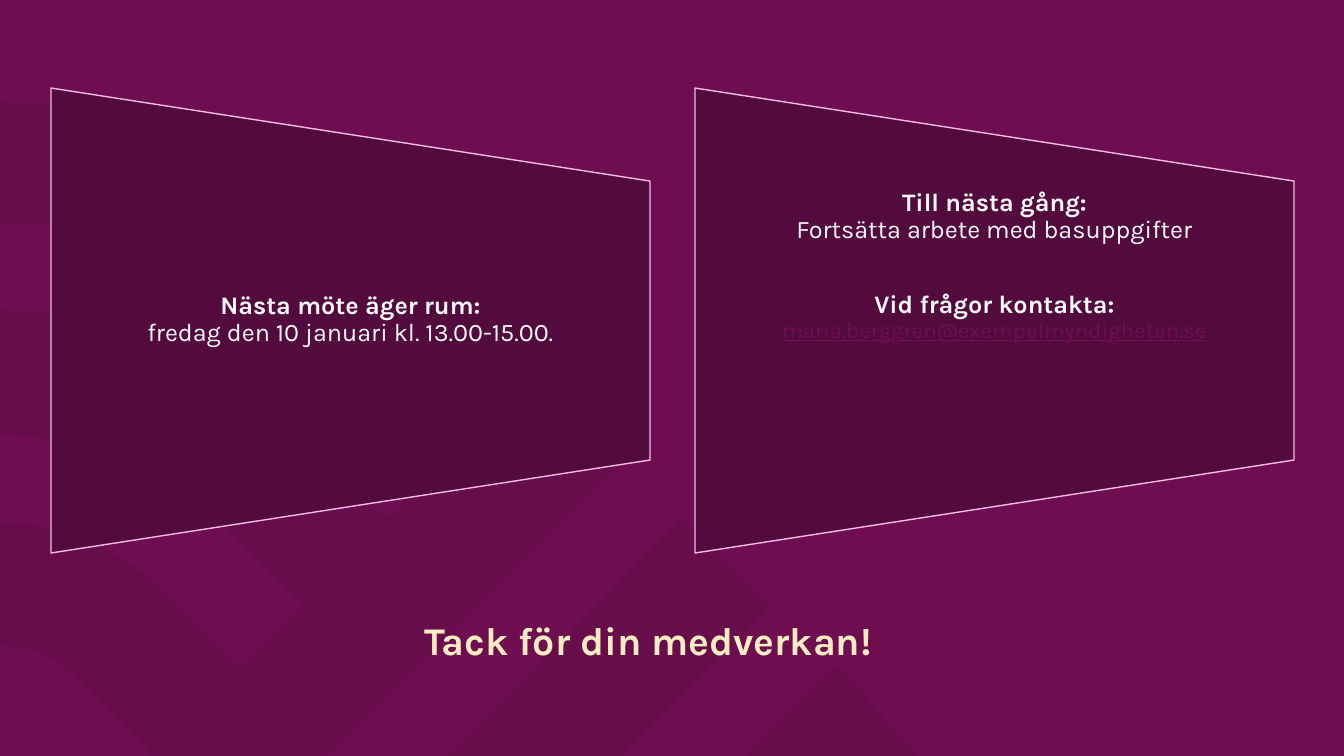
"""Build a closing slide with the next meeting, contact details and thanks."""
from lxml.etree import SubElement
from pptx import Presentation
from pptx.dml.color import RGBColor
from pptx.enum.shapes import MSO_SHAPE
from pptx.enum.text import MSO_ANCHOR, PP_ALIGN
from pptx.oxml.ns import qn
from pptx.util import Pt

PANELS = [
    {"anchor": MSO_ANCHOR.MIDDLE, "inset": 0, "blocks": [
        ("Nästa möte äger rum:", "fredag den 10 januari kl. 13.00-15.00.", "body"),
    ]},
    {"anchor": MSO_ANCHOR.TOP, "inset": 10, "blocks": [
        ("Till nästa gång:", "Fortsätta arbete med basuppgifter", "body"),
        ("Vid frågor kontakta:", "maria.berggren@exempelmyndigheten.se", "mail"),
    ]},
]
THANKS = "Tack för din medverkan!"

# Each contour lists points; a six-number entry is a Bézier segment.
CONTOURS = [
    [(838, 665), (917, 756), (745, 756)],
    [(682, 518), (771, 606), (621, 756), (447, 756)],
    [(0, 102), (58, 105), (205, 119, 347, 181, 458, 293), (624, 459),
     (327, 756), (149, 756), (152, 753), (75, 676),
     (59, 660, 40, 650, 20, 647), (0, 645), (0, 522), (2, 522),
     (60, 523, 119, 546, 163, 592), (241, 668), (303, 606), (226, 529),
     (223, 525), (176, 480, 119, 452, 59, 440), (0, 434), (0, 310),
     (40, 312), (139, 323, 235, 365, 310, 440), (388, 518), (451, 455),
     (373, 378), (286, 289, 172, 236, 53, 224), (0, 223)],
]

THEME = {
    "font": "Karla", "bg": "6E0E50", "pattern": "370728", "pattern_alpha": 10,
    "panel": "520B3C", "edge": "F6BBE4",
    "head": {"size": 18, "color": "FAFAFA", "bold": True},
    "body": {"size": 18, "color": "FAFAFA", "bold": False},
    "mail": {"size": 16, "color": "6E0E50", "bold": False, "underline": True},
    "thanks": {"size": 28, "color": "FFECC1", "bold": True},
}
SCALE = 914400 / 100.8
SLIDE_W, SLIDE_H = 1344, 756
PANEL_X, PANEL_Y, PANEL_W, PANEL_H, PANEL_STEP = 51, 88, 599, 465, 644
TEXT_Y, TEXT_H, TEXT_INSET = 180, 280, 12
THANKS_BOX = (415, 611, 514, 57)
CURVE_STEPS = 12


def px(n):
    return round(n * SCALE)


def rgb(code):
    return RGBColor.from_string(code)


def set_all(obj, values):
    for name, value in values.items():
        setattr(obj, name, value)


def flatten(contour):
    points = []
    for seg in contour:
        if len(seg) == 2:
            points.append(seg)
            continue
        curve = [points[-1], seg[:2], seg[2:4], seg[4:]]
        for i in range(1, CURVE_STEPS + 1):
            t = i / CURVE_STEPS
            weights = ((1 - t) ** 3, 3 * t * (1 - t) ** 2, 3 * t * t * (1 - t), t ** 3)
            points.append(tuple(sum(w * pt[axis] for w, pt in zip(weights, curve))
                                for axis in (0, 1)))
    return points


def add_pattern(shapes):
    outlines = [flatten(c) for c in CONTOURS]
    fb = shapes.build_freeform(*outlines[0][0], scale=SCALE)
    for i, points in enumerate(outlines):
        if i:
            fb.move_to(*points[0])
        fb.add_line_segments(points[1:], close=True)
    sp = fb.convert_to_shape()
    sp.shadow.inherit = False
    sp.fill.solid()
    sp.fill.fore_color.rgb = rgb(THEME["pattern"])
    color = sp._element.spPr.find(qn("a:solidFill"))[0]
    SubElement(color, qn("a:alpha"), val=str(THEME["pattern_alpha"] * 1000))
    sp.line.fill.background()


def add_run(p, text, style):
    r = p.add_run()
    r.text = text
    values = dict(THEME[style], name=THEME["font"])
    r.font.color.rgb = rgb(values.pop("color"))
    values["size"] = Pt(values["size"])
    set_all(r.font, values)


def add_panel(shapes, left, panel):
    sp = shapes.add_shape(MSO_SHAPE.FLOWCHART_MANUAL_OPERATION,
                          px(left + (PANEL_W - PANEL_H) / 2),
                          px(PANEL_Y + (PANEL_H - PANEL_W) / 2),
                          px(PANEL_H), px(PANEL_W))
    sp.rotation = 270
    sp.shadow.inherit = False
    sp.fill.solid()
    sp.fill.fore_color.rgb = rgb(THEME["panel"])
    sp.line.color.rgb = rgb(THEME["edge"])
    sp.line.width = Pt(1)

    tf = shapes.add_textbox(px(left), px(TEXT_Y), px(PANEL_W), px(TEXT_H)).text_frame
    set_all(tf, {"word_wrap": True, "vertical_anchor": panel["anchor"],
                 "margin_left": px(TEXT_INSET), "margin_right": px(TEXT_INSET),
                 "margin_top": px(panel["inset"]), "margin_bottom": 0})
    for i, (head, detail, style) in enumerate(panel["blocks"]):
        p = tf.add_paragraph() if i else tf.paragraphs[0]
        set_all(p, {"alignment": PP_ALIGN.CENTER, "line_spacing": 0.9,
                    "space_before": Pt(34 if i else 0)})
        add_run(p, head, "head")
        p.add_line_break()
        add_run(p, detail, style)


def main():
    prs = Presentation()
    set_all(prs, {"slide_width": px(SLIDE_W), "slide_height": px(SLIDE_H)})
    s = prs.slides.add_slide(prs.slide_layouts[6])
    s.background.fill.solid()
    s.background.fill.fore_color.rgb = rgb(THEME["bg"])
    add_pattern(s.shapes)
    for i, panel in enumerate(PANELS):
        add_panel(s.shapes, PANEL_X + i * PANEL_STEP, panel)
    tf = s.shapes.add_textbox(*map(px, THANKS_BOX)).text_frame
    tf.word_wrap = True
    add_run(tf.paragraphs[0], THANKS, "thanks")
    prs.save("out.pptx")


if __name__ == "__main__":
    main()
